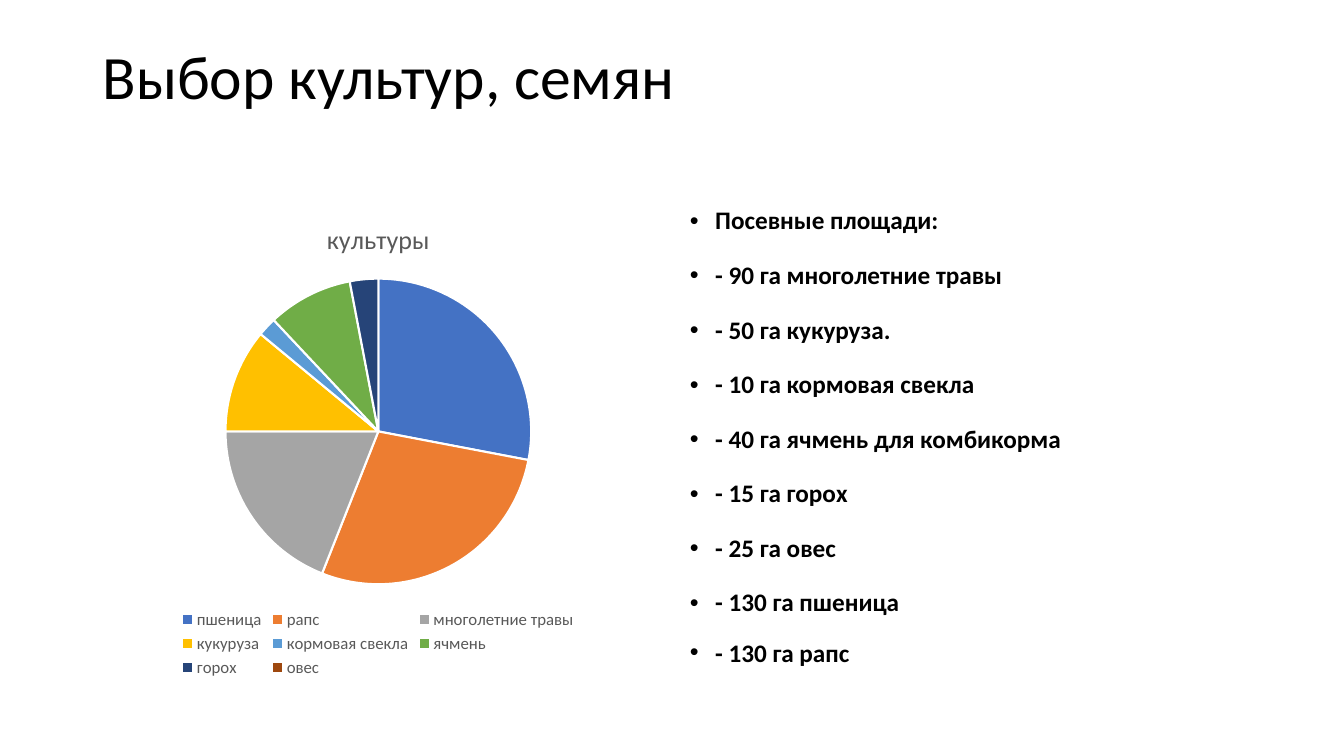
from lxml.etree import SubElement
from pptx import Presentation
from pptx.chart.data import CategoryChartData
from pptx.dml.color import RGBColor
from pptx.enum.chart import XL_CHART_TYPE, XL_LEGEND_POSITION
from pptx.enum.text import MSO_ANCHOR
from pptx.oxml.ns import qn
from pptx.util import Inches, Pt

FONT = "Calibri"
COLORS = {"text": "000000", "muted": "595959", "edge": "FFFFFF"}
CROPS = [
    ("пшеница", 28, "4472C4"),
    ("рапс", 28, "ED7D31"),
    ("многолетние травы", 19, "A5A5A5"),
    ("кукуруза", 11, "FFC000"),
    ("кормовая свекла", 2, "5B9BD5"),
    ("ячмень", 9, "70AD47"),
    ("горох", 3, "264478"),
    ("овес", None, "9E480E"),
]
AREAS = [
    "Посевные площади:",
    "- 90 га многолетние травы",
    "- 50 га кукуруза.",
    "- 10 га кормовая свекла",
    "- 40 га ячмень для комбикорма",
    "- 15 га горох",
    "- 25 га овес",
    "- 130 га пшеница",
    "- 130 га рапс",
]
WIDTH, HEIGHT = Inches(13.33), Inches(7.5)
MARGIN, GAP = Inches(0.92), Inches(0.16)
COLUMN = (WIDTH - 2 * MARGIN - GAP) // 2
TITLE_TOP, TITLE_HEIGHT = Inches(0.4), Inches(1.45)
BODY_TOP, BODY_HEIGHT = Inches(2), Inches(4.76)


def style_font(font, size, color, bold=False):
    font.name = FONT
    font.size = Pt(size)
    font.bold = bold
    font.color.rgb = RGBColor.from_string(COLORS[color])


def add_title(page, box):
    frame = page.shapes.add_textbox(*box).text_frame
    frame.word_wrap = True
    frame.vertical_anchor = MSO_ANCHOR.MIDDLE
    frame.margin_bottom = Inches(0.72)
    frame.text = "Выбор культур, семян"
    para = frame.paragraphs[0]
    para.line_spacing = 0.9
    style_font(para.runs[0].font, 44, "text")


def add_crop_chart(page, box):
    data = CategoryChartData()
    data.categories = [name for name, share, color in CROPS]
    data.add_series("культуры", [share for name, share, color in CROPS])
    chart = page.shapes.add_chart(XL_CHART_TYPE.PIE, *box, data).chart
    style_font(chart.font, 10, "text")

    chart.has_title = True
    title = chart.chart_title.text_frame
    title.text = "культуры"
    style_font(title.paragraphs[0].runs[0].font, 18.6, "muted")

    chart.has_legend = True
    chart.legend.position = XL_LEGEND_POSITION.BOTTOM
    chart.legend.include_in_layout = False
    style_font(chart.legend.font, 12, "muted")

    plot = chart.plots[0]
    plot.vary_by_categories = True
    for index, (name, share, color) in enumerate(CROPS):
        slice_format = plot.series[0].points[index].format
        slice_format.fill.solid()
        slice_format.fill.fore_color.rgb = RGBColor.from_string(color)
        slice_format.line.color.rgb = RGBColor.from_string(COLORS["edge"])
        slice_format.line.width = Pt(1.5)


def add_bullet(para):
    properties = para._p.get_or_add_pPr()
    properties.set("marL", str(Inches(0.25)))
    properties.set("indent", str(-Inches(0.25)))
    SubElement(properties, qn("a:buFont")).set("typeface", "Arial")
    SubElement(properties, qn("a:buChar")).set("char", "•")


def add_area_list(page, box):
    frame = page.shapes.add_textbox(*box).text_frame
    frame.word_wrap = True
    last = len(AREAS) - 1
    for index, area in enumerate(AREAS):
        para = frame.add_paragraph() if index else frame.paragraphs[0]
        para.text = area
        add_bullet(para)
        para.line_spacing = 0.8 if index == last else 0.97
        para.space_before = Pt(10 if index else 0)
        para.space_after = Pt(0 if index == last else 8)
        style_font(para.runs[0].font, 18, "text", bold=True)


def main():
    deck = Presentation()
    deck.slide_width, deck.slide_height = WIDTH, HEIGHT
    page = deck.slides.add_slide(deck.slide_layouts[6])
    add_title(page, (MARGIN, TITLE_TOP, WIDTH - 2 * MARGIN, TITLE_HEIGHT))
    add_crop_chart(page, (MARGIN, BODY_TOP, COLUMN, BODY_HEIGHT))
    add_area_list(page, (MARGIN + COLUMN + GAP, BODY_TOP, COLUMN, BODY_HEIGHT))
    deck.save("out.pptx")


if __name__ == "__main__":
    main()
